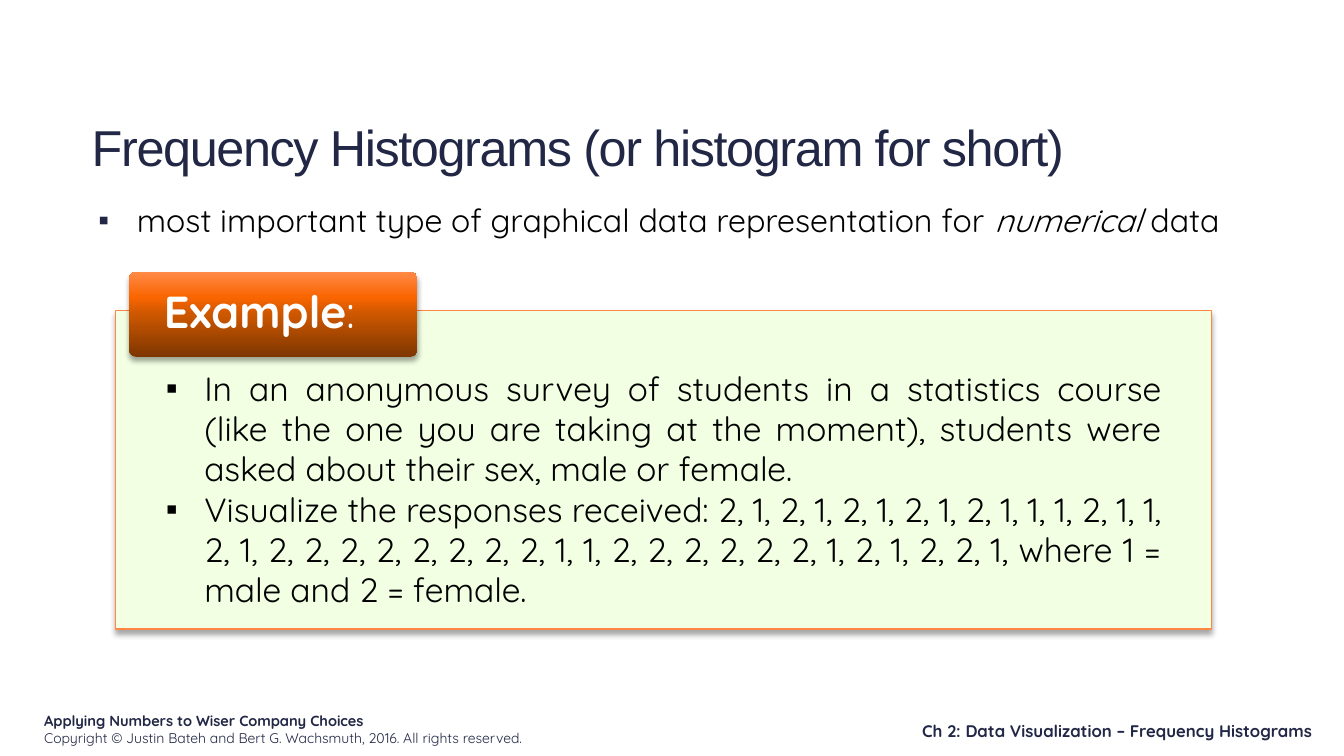
from lxml.etree import SubElement
from pptx import Presentation
from pptx.dml.color import RGBColor
from pptx.enum.shapes import MSO_SHAPE
from pptx.enum.text import MSO_ANCHOR, PP_ALIGN
from pptx.oxml import parse_xml
from pptx.oxml.ns import qn
from pptx.util import Pt

# Content: each paragraph is a list of (text, style) runs
TITLE = "Frequency Histograms (or histogram for short)"
LEAD = [[("most important type of graphical data representation for ", {}),
         ("numerical ", {"italic": True}), ("data", {})]]
TAG = [[("Example", {"bold": True}), (": ", {})]]
POINTS = [
    [("In an anonymous survey of students in a statistics course (like the one you are "
      "taking at the moment), students were asked about their sex, male or female. ", {})],
    [("Visualize the responses received: 2, 1, 2, 1, 2, 1, 2, 1, 2, 1, 1, 1, 2, 1, 1, "
      "2, 1, 2, 2, 2, 2, 2, 2, 2, 2, 1, 1, 2, 2, 2, 2, 2, 2, 1, 2, 1, 2, 2, 1, "
      "where 1 = male and 2 = female.", {})],
]
BOOK = [
    [("Applying Numbers to Wiser Company Choices", {"bold": True, "size": Pt(10.5)})],
    [("Copyright © Justin Bateh and Bert G. Wachsmuth, 2016. All rights reserved.", {})],
]
CHAPTER = [[("Ch 2: Data Visualization – Frequency Histograms", {"bold": True})]]


class Theme:
    navy, black, white = "212745", "000000", "FFFFFF"
    mint, orange = "F2FFE3", "FF8643"
    glow = [(0, "7E3600"), (50, "CC5700"), (70, "F96500"), (100, "FF8947")]
    head, font = "Arial", "Quicksand"
    title, lead, tag, point, chapter, book = 36, 23, 32, 24, 12, 10


# Left, top, width, height in points
BOX = {
    "title": (58.3, 79.3, 861, 70.5),
    "lead": (58.3, 139.7, 901.7, 42),
    "card": (82.5, 221.8, 783, 227.5),
    "tag": (92.2, 194.4, 206, 60.5),
    "book": (24.5, 504.7, 380, 29),
    "chapter": (468, 511, 476.6, 21.8),
}
NS = 'xmlns:a="http://schemas.openxmlformats.org/drawingml/2006/main"'


def place(shape, name):
    shape.left, shape.top, shape.width, shape.height = map(Pt, BOX[name])


def inset(frame, left, top, right, bottom):
    sides = {"left": left, "top": top, "right": right, "bottom": bottom}
    for side, gap in sides.items():
        setattr(frame, "margin_" + side, Pt(gap))
    frame.word_wrap = True


def style(font, size, color, name=Theme.font, **extra):
    font.color.rgb = RGBColor.from_string(color)
    for key, value in {"size": Pt(size), "name": name, **extra}.items():
        setattr(font, key, value)


def write(frame, paras, size, color, align=PP_ALIGN.LEFT):
    for i, runs in enumerate(paras):
        para = frame.add_paragraph() if i else frame.paragraphs[0]
        para.alignment = align
        for text, look in runs:
            run = para.add_run()
            run.text = text
            style(run.font, size, color)
            for key, value in look.items():
                setattr(run.font, key, value)


def bullet(para, left, hang, color, scale=100):
    props = para._p.get_or_add_pPr()
    props.set("marL", str(Pt(left)))
    props.set("indent", str(-Pt(hang)))
    tint = SubElement(props, qn("a:buClr"))
    SubElement(tint, qn("a:srgbClr"), val=color)
    SubElement(props, qn("a:buSzPct"), val=str(scale * 1000))
    SubElement(props, qn("a:buFont"), typeface="Arial")
    SubElement(props, qn("a:buChar"), char="▪")


def shade(shape):
    """Give a shape a soft shadow straight below it."""
    shape._element.spPr.append(parse_xml(
        f'<a:effectLst {NS}><a:outerShdw blurRad="{Pt(4)}" dist="{Pt(3)}" dir="5400000" '
        f'rotWithShape="0"><a:srgbClr val="{Theme.black}"><a:alpha val="35000"/>'
        '</a:srgbClr></a:outerShdw></a:effectLst>'))


def blend(shape, stops):
    """Fill a shape with a gradient that runs from bottom to top."""
    marks = "".join(f'<a:gs pos="{pos * 1000}"><a:srgbClr val="{color}"/></a:gs>'
                    for pos, color in stops)
    shape._element.spPr.find(qn("a:prstGeom")).addnext(parse_xml(
        f'<a:gradFill {NS} rotWithShape="1"><a:gsLst>{marks}</a:gsLst>'
        '<a:lin ang="16200000" scaled="0"/></a:gradFill>'))


def label(slide, name, paras, size, color, align=PP_ALIGN.LEFT):
    box = slide.shapes.add_textbox(*map(Pt, BOX[name]))
    inset(box.text_frame, 7.2, 3.6, 7.2, 3.6)
    write(box.text_frame, paras, size, color, align)
    return box.text_frame


def panel(slide, name, kind):
    shape = slide.shapes.add_shape(kind, *map(Pt, BOX[name]))
    shade(shape)
    return shape


def main():
    deck = Presentation()
    deck.slide_width, deck.slide_height = Pt(960), Pt(540)
    slide = deck.slides.add_slide(deck.slide_layouts[5])

    title = slide.shapes.title
    place(title, "title")
    frame = title.text_frame
    inset(frame, 7.2, 3.6, 7.2, 3.6)
    frame.vertical_anchor = MSO_ANCHOR.TOP
    frame.text = TITLE
    frame.paragraphs[0].alignment = PP_ALIGN.LEFT
    run = frame.paragraphs[0].runs[0]
    style(run.font, Theme.title, Theme.navy, Theme.head)
    run._r.get_or_add_rPr().set("spc", "-100")

    lead = label(slide, "lead", LEAD, Theme.lead, Theme.black)
    bullet(lead.paragraphs[0], 32.4, 27.4, Theme.navy, 95)

    card = panel(slide, "card", MSO_SHAPE.RECTANGLE)
    card.fill.solid()
    card.fill.fore_color.rgb = RGBColor.from_string(Theme.mint)
    card.line.color.rgb = RGBColor.from_string(Theme.orange)
    card.line.width = Pt(1)
    frame = card.text_frame
    inset(frame, 36, 40.8, 36, 0)
    frame.vertical_anchor = MSO_ANCHOR.TOP
    write(frame, POINTS, Theme.point, Theme.black, PP_ALIGN.JUSTIFY)
    for para in frame.paragraphs:
        bullet(para, 27.4, 27.4, Theme.black)

    tag = panel(slide, "tag", MSO_SHAPE.ROUNDED_RECTANGLE)
    tag.adjustments[0] = 0.08
    blend(tag, Theme.glow)
    tag.line.fill.background()
    inset(tag.text_frame, 23.5, 2.9, 23.5, 2.9)
    tag.text_frame.vertical_anchor = MSO_ANCHOR.MIDDLE
    write(tag.text_frame, TAG, Theme.tag, Theme.white)
    tag.text_frame.paragraphs[0].line_spacing = 0.9

    label(slide, "book", BOOK, Theme.book, Theme.navy)
    chapter = label(slide, "chapter", CHAPTER, Theme.chapter, Theme.navy, PP_ALIGN.RIGHT)
    chapter.vertical_anchor = MSO_ANCHOR.BOTTOM
    deck.save("out.pptx")


if __name__ == "__main__":
    main()
